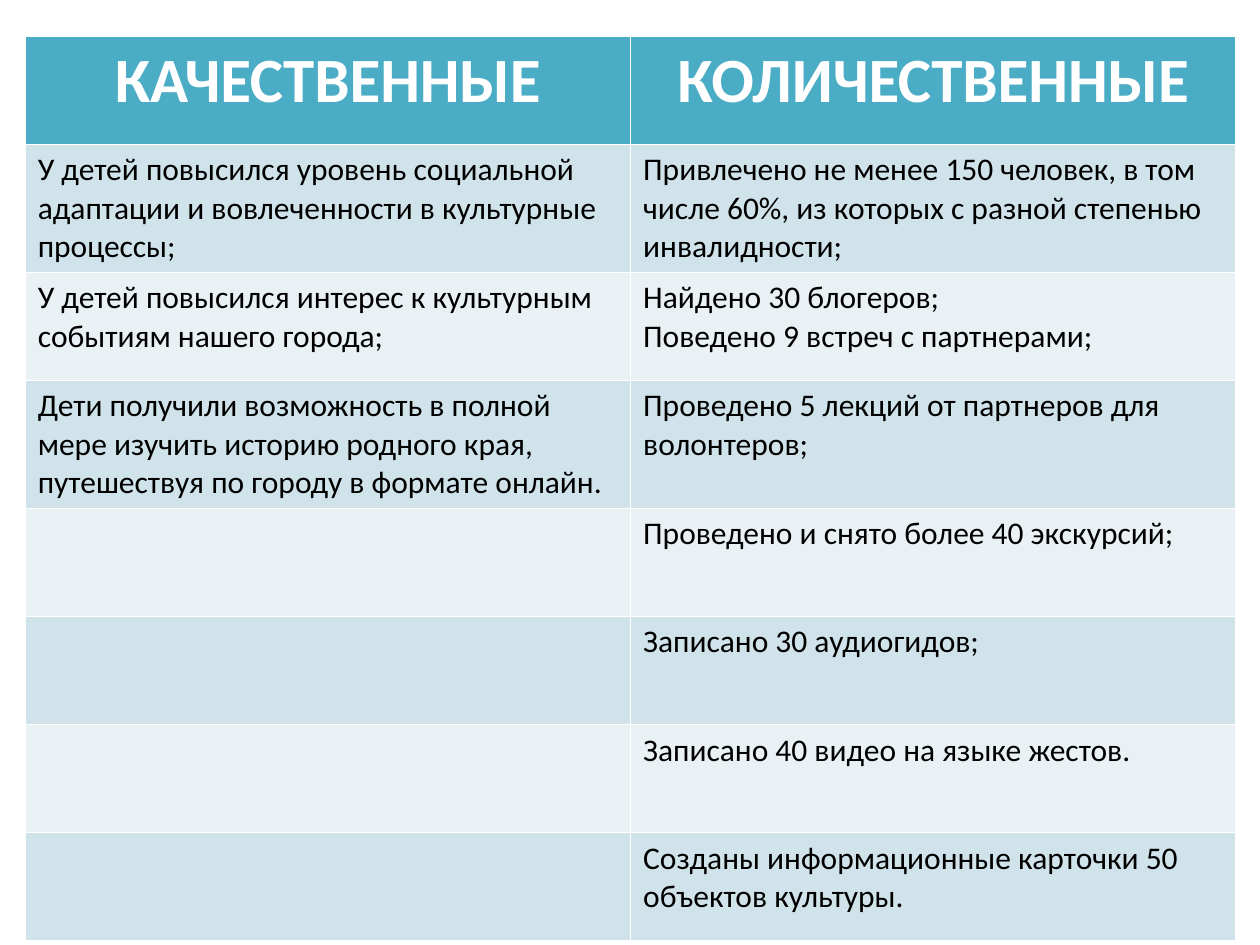
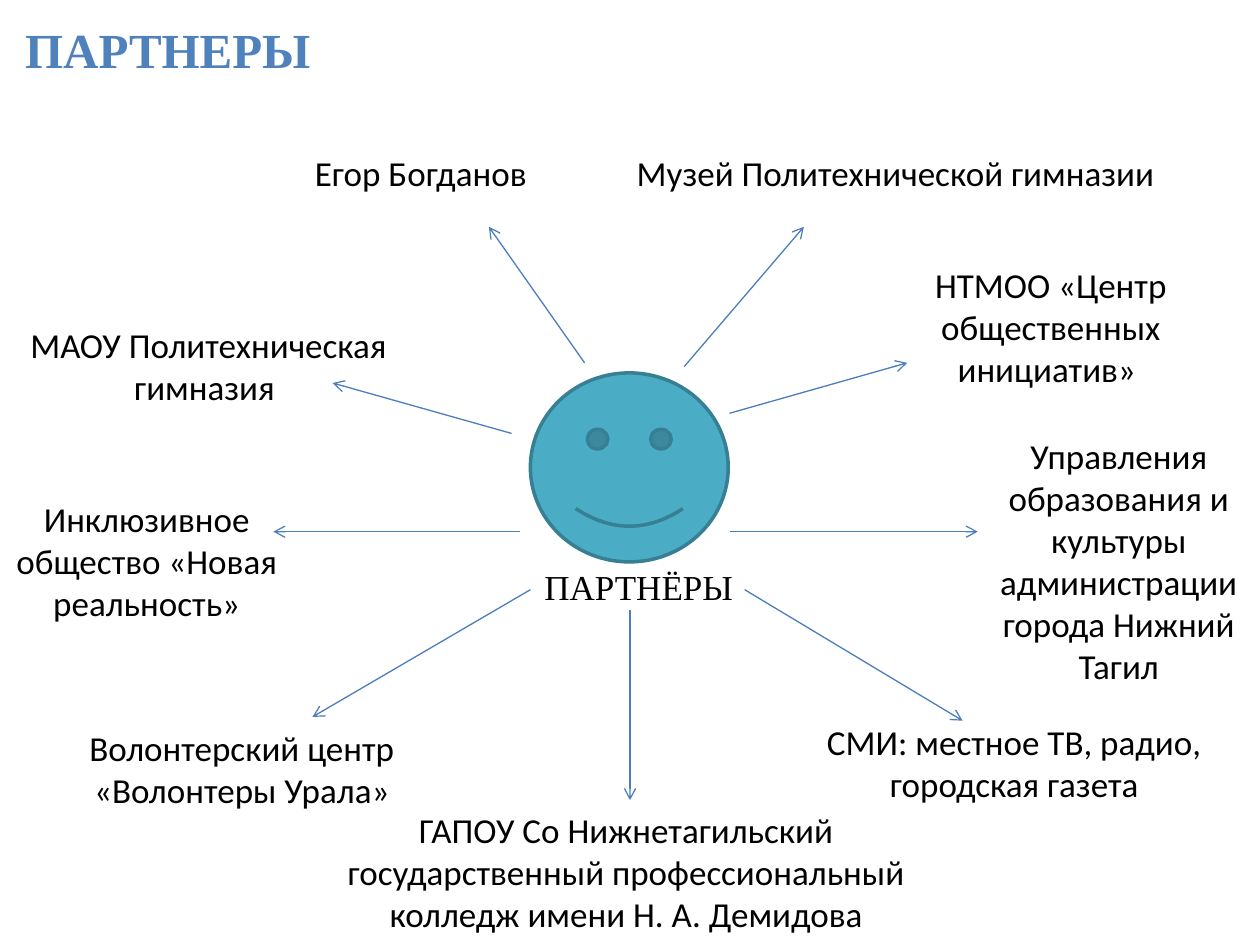
from lxml import etree
from pptx import Presentation
from pptx.dml.color import RGBColor
from pptx.enum.shapes import MSO_CONNECTOR, MSO_SHAPE
from pptx.enum.text import MSO_ANCHOR, MSO_AUTO_SIZE, PP_ALIGN
from pptx.oxml.ns import qn
from pptx.util import Inches, Pt

STRAIGHT = MSO_CONNECTOR.STRAIGHT
SMILEY = MSO_SHAPE.SMILEY_FACE
TOP = MSO_ANCHOR.TOP
NO_FIT = MSO_AUTO_SIZE.NONE
LEFT, CENTER = PP_ALIGN.LEFT, PP_ALIGN.CENTER

BODY_FONT, TITLE_FONT = "Calibri", "Times New Roman"
BLACK, WHITE = "000000", "FFFFFF"
TEAL, TEAL_DARK = "4BACC6", "377F92"
TITLE_BLUE, ARROW_BLUE = "4F81BD", "4B7EBC"
BANDS = ["D0E3EA", "E9F1F5"]
TITLE_ONLY, BLANK = 5, 6

RESULTS = [
    ("КАЧЕСТВЕННЫЕ", "КОЛИЧЕСТВЕННЫЕ"),
    ("У детей повысился уровень социальной адаптации и вовлеченности в культурные процессы;",
     "Привлечено не менее 150 человек, в том числе 60%, из которых с разной степенью инвалидности;"),
    ("У детей повысился интерес к культурным событиям нашего города;",
     "Найдено 30 блогеров;\nПоведено 9 встреч с партнерами;"),
    ("Дети получили возможность в полной мере изучить историю родного края, "
     "путешествуя по городу в формате онлайн.",
     "Проведено 5 лекций от партнеров для волонтеров;"),
    ("", "Проведено и снято более 40 экскурсий;"),
    ("", "Записано 30 аудиогидов;"),
    ("", "Записано 40 видео на языке жестов."),
    ("", "Созданы информационные карточки 50 объектов культуры."),
]

PARTNERS = [
    ("Егор Богданов", (2.36, 1.15, 1.96, 0.44)),
    ("Музей Политехнической гимназии ", (4.64, 1.15, 5, 0.44)),
    ("НТМОО «Центр общественных инициатив» ", (6.88, 2.04, 2.92, 1.11)),
    ("Управления образования и культуры администрации города Нижний Тагил",
     (7.76, 3.4, 2.24, 2.12)),
    ("СМИ: местное ТВ, радио, городская газета", (6.1, 5.67, 3.9, 0.77)),
    ("ГАПОУ Со Нижнетагильский государственный профессиональный колледж имени Н. А. Демидова",
     (2.47, 6.37, 5, 1.11)),
    ("Волонтерский центр «Волонтеры Урала»", (0.02, 5.72, 3.8, 0.77)),
    ("Инклюзивное общество «Новая реальность»", (0.01, 3.9, 2.31, 1.11)),
    ("МАОУ Политехническая гимназия ", (-0.28, 2.52, 3.87, 0.77)),
]

ARROWS = [
    ((4.64, 2.88), (3.88, 1.8)),
    ((5.43, 2.91), (6.38, 1.8)),
    ((5.79, 3.28), (7.2, 2.88)),
    ((5.79, 4.22), (7.76, 4.22)),
    ((5.91, 4.68), (7.64, 5.72)),
    ((5, 4.84), (5, 6.35)),
    ((4.21, 4.68), (2.48, 5.69)),
    ((4.13, 4.22), (2.17, 4.22)),
    ((4.06, 3.44), (2.64, 3.04)),
]


def color(value):
    return RGBColor.from_string(value)


def inches(values):
    return [Inches(value) for value in values]


def style(para, size, tone=BLACK, font=BODY_FONT, bold=False, align=LEFT):
    para.alignment = align
    para.font.size = Pt(size)
    para.font.name = font
    para.font.bold = bold
    para.font.color.rgb = color(tone)


def add_title(page, text, box):
    title = page.shapes.title
    title.left, title.top, title.width, title.height = inches(box)
    frame = title.text_frame
    frame.text = text
    frame.auto_size = NO_FIT
    frame.vertical_anchor = TOP
    frame.margin_left = frame.margin_top = frame.margin_right = frame.margin_bottom = 0
    para = frame.paragraphs[0]
    para.line_spacing = 0.9
    style(para, 28, TITLE_BLUE, TITLE_FONT, True)


def add_label(page, text, box, font=BODY_FONT, wrap=True):
    frame = page.shapes.add_textbox(*inches(box)).text_frame
    frame.word_wrap = wrap
    frame.text = text
    style(frame.paragraphs[0], 20, font=font, align=CENTER)


def add_arrow(page, start, end):
    arrow = page.shapes.add_connector(STRAIGHT, *inches(start + end))
    arrow.line.color.rgb = color(ARROW_BLUE)
    arrow.line.width = Pt(0.75)
    etree.SubElement(arrow.line._get_or_add_ln(), qn("a:tailEnd"), type="arrow")
    etree.SubElement(arrow._element.spPr, qn("a:effectLst"))


def add_smiley(page, box):
    smiley = page.shapes.add_shape(SMILEY, *inches(box))
    smiley.shadow.inherit = False
    smiley.fill.solid()
    smiley.fill.fore_color.rgb = color(TEAL)
    smiley.line.color.rgb = color(TEAL_DARK)
    smiley.line.width = Pt(2)


def add_results_table(page, box):
    table = page.shapes.add_table(len(RESULTS), 2, *inches(box)).table
    for row, texts in enumerate(RESULTS):
        for column, text in enumerate(texts):
            cell = table.cell(row, column)
            cell.text = text
            cell.fill.solid()
            cell.fill.fore_color.rgb = color(BANDS[(row - 1) % 2] if row else TEAL)
            for para in cell.text_frame.paragraphs:
                if row:
                    style(para, 18)
                else:
                    style(para, 36, WHITE, bold=True, align=CENTER)


def build_results(deck):
    page = deck.slides.add_slide(deck.slide_layouts[BLANK])
    add_results_table(page, (0.2, 0.29, 9.61, 6.86))


def build_partners(deck):
    page = deck.slides.add_slide(deck.slide_layouts[TITLE_ONLY])
    add_title(page, "ПАРТНЕРЫ", (0.2, 0.21, 9.61, 0.63))
    add_smiley(page, (4.21, 2.96, 1.57, 1.5))
    add_label(page, "ПАРТНЁРЫ", (4.21, 4.44, 1.72, 0.44), TITLE_FONT, False)
    for start, end in ARROWS:
        add_arrow(page, start, end)
    for text, box in PARTNERS:
        add_label(page, text, box)


def main():
    deck = Presentation()
    deck.slide_width, deck.slide_height = Inches(10), Inches(7.5)
    build_results(deck)
    build_partners(deck)
    deck.save("out.pptx")


if __name__ == "__main__":
    main()
